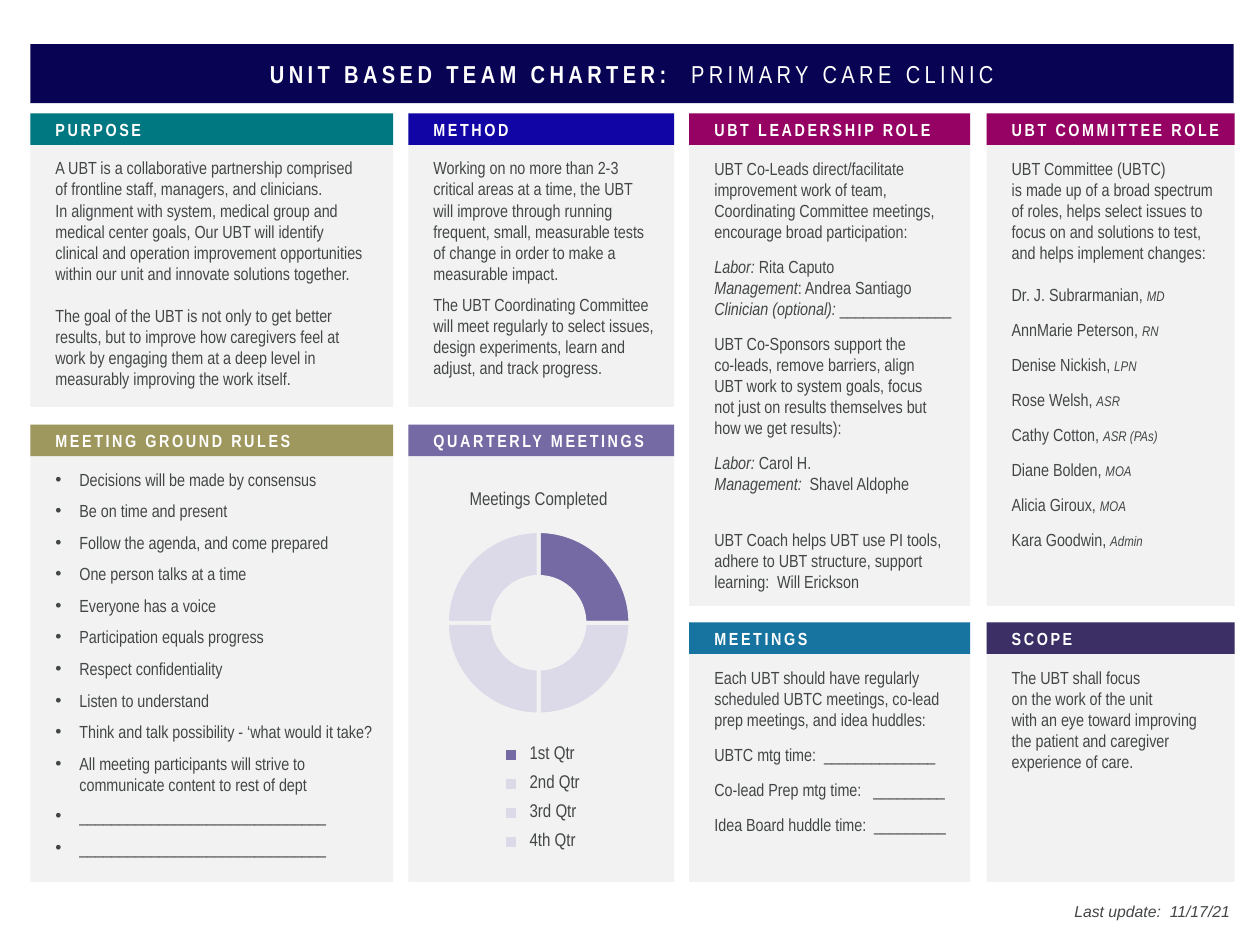
from dataclasses import dataclass
from typing import NamedTuple

from lxml.etree import SubElement
from pptx import Presentation
from pptx.chart.data import CategoryChartData
from pptx.dml.color import RGBColor
from pptx.enum.chart import XL_CHART_TYPE as ChartType, XL_LEGEND_POSITION as LegendPos
from pptx.enum.shapes import MSO_SHAPE as Shape
from pptx.enum.text import MSO_ANCHOR as Anchor, PP_ALIGN as Align
from pptx.oxml import parse_xml
from pptx.oxml.ns import nsdecls, qn
from pptx.util import Inches, Pt

WHITE = RGBColor(0xFF, 0xFF, 0xFF)
TEXT = RGBColor(0x43, 0x46, 0x47)
PANEL = RGBColor(0xF2, 0xF2, 0xF2)
NAVY = RGBColor(0x08, 0x03, 0x52)
TEAL = RGBColor(0x00, 0x78, 0x81)
BLUE = RGBColor(0x11, 0x05, 0xA5)
MAGENTA = RGBColor(0x96, 0x02, 0x63)
OLIVE = RGBColor(0x9F, 0x98, 0x5E)
PURPLE = RGBColor(0x75, 0x6A, 0xA3)
LILAC = RGBColor(0xDC, 0xD9, 0xE8)
CYAN = RGBColor(0x17, 0x73, 0xA0)
INDIGO = RGBColor(0x3B, 0x2F, 0x66)
NARROW = "Arial Narrow"

# Grid: (left, width) of each column, (top, height) of each panel row
COLUMNS = [(0.24, 2.88), (3.24, 2.11), (5.47, 2.23), (7.83, 1.97)]
SHORT_TOP, LONG_BOTTOM = (0.9, 2.33), (3.37, 3.63)
LONG_TOP, SHORT_BOTTOM = (0.9, 3.91), (4.94, 2.06)
HEADER_H = 0.25
INDENT = 0.19


class Run(NamedTuple):
    text: str
    italic: bool = False
    size: float = 10


class Para(NamedTuple):
    runs: list[Run]
    after: float = 8


@dataclass
class Panel:
    title: str
    color: RGBColor
    column: int
    row: tuple[float, float]
    paras: list[Para]
    right: float = 0.1
    bullets: bool = False


def plain(text: str, after: float = 8) -> Para:
    return Para([Run(text)], after)


def labelled(label: str, value: str, after: float = 0) -> Para:
    return Para([Run(label, True), Run(value)], after)


def member(name: str, role: str) -> Para:
    return Para([Run(name + ", "), Run(role, True, 8)])


RULES = [
    "Decisions will be made by consensus", "Be on time and present",
    "Follow the agenda, and come prepared", "One person talks at a time",
    "Everyone has a voice", "Participation equals progress",
    "Respect confidentiality", "Listen to understand",
    "Think and talk possibility - ‘what would it take?",
    "All meeting participants will strive to communicate content to rest of dept",
    "_" * 31, "_" * 31,
]
MEMBERS = [
    ("Dr. J. Subrarmanian", "MD"), ("AnnMarie Peterson", "RN"),
    ("Denise Nickish", "LPN"), ("Rose Welsh", "ASR"),
    ("Cathy Cotton", "ASR (PAs)"), ("Diane Bolden", "MOA"),
    ("Alicia Giroux", "MOA"), ("Kara Goodwin", "Admin"),
]
PANELS = [
    Panel("PURPOSE", TEAL, 0, SHORT_TOP, [
        plain("A UBT is a collaborative partnership comprised of frontline staff, managers, "
              "and clinicians. \nIn alignment with system, medical group and medical center "
              "goals, Our UBT will identify clinical and operation improvement opportunities "
              "within our unit and innovate solutions together.", 12),
        plain("The goal of the UBT is not only to get better results, but to improve how "
              "caregivers feel at work by engaging them at a deep level in measurably "
              "improving the work itself.")], right=0.2),
    Panel("METHOD", BLUE, 1, SHORT_TOP, [
        plain("Working on no more than 2-3 critical areas at a time, the UBT \nwill improve "
              "through running frequent, small, measurable tests \nof change in order to "
              "make a measurable impact.", 6),
        plain("The UBT Coordinating Committee will meet regularly to select issues, design "
              "experiments, learn and adjust, and track progress.", 6)]),
    Panel("UBT LEADERSHIP ROLE", MAGENTA, 2, LONG_TOP, [
        plain("UBT Co-Leads direct/facilitate improvement work of team, Coordinating "
              "Committee meetings, encourage broad participation:"),
        labelled("Labor: ", "Rita Caputo"),
        labelled("Management", ": Andrea Santiago"),
        labelled("Clinician (optional): ", "_" * 14, 8),
        plain("UBT Co-Sponsors support the \nco-leads, remove barriers, align \nUBT work to "
              "system goals, focus \nnot just on results themselves but \nhow we get results):"),
        labelled("Labor: ", "Carol H."),
        labelled("Management:  ", "Shavel Aldophe", 20),
        plain("UBT Coach helps UBT use PI tools, \nadhere to UBT structure, support "
              "learning:  Will Erickson")]),
    Panel("UBT COMMITTEE ROLE", MAGENTA, 3, LONG_TOP, [
        plain("UBT Committee (UBTC) \nis made up of a broad spectrum \nof roles, helps select "
              "issues to \nfocus on and solutions to test, \nand helps implement changes:", 12),
        *(member(*m) for m in MEMBERS)], right=0),
    Panel("MEETING GROUND RULES", OLIVE, 0, LONG_BOTTOM,
          [plain(rule, 6) for rule in RULES], bullets=True),
    Panel("QUARTERLY MEETINGS", PURPLE, 1, LONG_BOTTOM, []),
    Panel("MEETINGS", CYAN, 2, SHORT_BOTTOM, [
        plain("Each UBT should have regularly scheduled UBTC meetings, co-lead \n"
              "prep meetings, and idea huddles:"),
        plain("UBTC mtg time:  " + "_" * 14),
        plain("Co-lead Prep mtg time:   " + "_" * 9),
        plain("Idea Board huddle time:  " + "_" * 9)]),
    Panel("SCOPE", INDIGO, 3, SHORT_BOTTOM, [
        plain("The UBT shall focus \non the work of the unit \nwith an eye toward improving "
              "the patient and caregiver experience of care.", 6)], right=0.2),
]


def style(font, size: float, color: RGBColor, bold=False, italic=False, name=NARROW) -> None:
    font.name, font.size, font.bold, font.italic = name, Pt(size), bold, italic
    font.color.rgb = color


def add_run(p, text: str, size: float, color: RGBColor, spacing: float = 0, **font) -> None:
    for i, line in enumerate(text.split("\n")):
        if i:
            p.add_line_break()
            SubElement(p._p[-1], qn("a:rPr"), sz=str(int(size * 100)))
        r = p.add_run()
        r.text = line
        style(r.font, size, color, **font)
        if spacing:
            r.font._element.set("spc", str(int(spacing * 100)))


def add_box(s, left, top, width, height, fill: RGBColor, anchor, insets):
    sp = s.shapes.add_shape(Shape.RECTANGLE, *map(Inches, (left, top, width, height)))
    sp.shadow.inherit = False
    sp.fill.solid()
    sp.fill.fore_color.rgb = fill
    sp.line.fill.background()
    tf = sp.text_frame
    tf.word_wrap, tf.vertical_anchor = True, anchor
    tf.margin_left, tf.margin_top, tf.margin_right, tf.margin_bottom = map(Inches, insets)
    tf.paragraphs[0].alignment = Align.LEFT
    return tf


def add_bullet(p) -> None:
    pPr = p._p.get_or_add_pPr()
    pPr.set("marL", str(Inches(INDENT)))
    pPr.set("indent", str(-Inches(INDENT)))
    color = SubElement(pPr, qn("a:buClr"))
    SubElement(color, qn("a:srgbClr"), val=str(TEXT))
    SubElement(pPr, qn("a:buFont"), typeface="Arial")
    SubElement(pPr, qn("a:buChar"), char="•")


def add_panel(s, panel: Panel) -> None:
    left, width = COLUMNS[panel.column]
    top, height = panel.row
    tf = add_box(s, left, top, width, height, PANEL, Anchor.TOP, (0.2, 0.35, panel.right, 0.05))
    for i, para in enumerate(panel.paras):
        p = tf.add_paragraph() if i else tf.paragraphs[0]
        p.alignment, p.space_after = Align.LEFT, Pt(para.after)
        if panel.bullets:
            add_bullet(p)
        for run in para.runs:
            add_run(p, run.text, run.size, TEXT, italic=run.italic)
    tf = add_box(s, left, top, width, HEADER_H, panel.color, Anchor.MIDDLE, (0.2, 0, 0.05, 0))
    add_run(tf.paragraphs[0], panel.title, 10, WHITE, 1.5, bold=True)


def set_layout(parent, index: int, target: str, **box: float) -> None:
    for old in parent.findall(qn("c:layout")):
        parent.remove(old)
    values = "".join(f'<c:{k} val="{v}"/>' for k, v in box.items())
    parent.insert(index, parse_xml(
        f'<c:layout {nsdecls("c")}><c:manualLayout>{target}<c:xMode val="edge"/>'
        f'<c:yMode val="edge"/>{values}</c:manualLayout></c:layout>'))


def add_meetings_chart(s) -> None:
    data = CategoryChartData()
    data.categories = [f"  {q} Qtr" for q in ("1st", "2nd", "3rd", "4th")]
    data.add_series("Meetings Completed", [25] * 4)
    chart = s.shapes.add_chart(ChartType.DOUGHNUT, Inches(3.22), Inches(3.75),
                               Inches(2.11), Inches(3.1), data).chart
    style(chart.font, 10, BLUE, name="Arial")
    chart.has_title = True
    add_run(chart.chart_title.text_frame.paragraphs[0], "Meetings Completed", 10.5, TEXT)
    chart.has_legend = True
    legend = chart.legend
    legend.position, legend.include_in_layout = LegendPos.BOTTOM, False
    style(legend.font, 10.5, TEXT)
    set_layout(legend._element, 1, "", x=0.34, y=0.67, w=0.35, h=0.35 - 0.02)
    plot_area = chart._chartSpace.chart.plotArea
    set_layout(plot_area, 0, '<c:layoutTarget val="inner"/>', x=0.15, y=0.15, w=0.7, h=0.47)
    plot = chart.plots[0]
    plot.vary_by_categories = True
    plot_area.find(".//" + qn("c:holeSize")).set("val", "66")
    for i, color in enumerate([PURPLE] + [LILAC] * 3):
        fmt = plot.series[0].points[i].format
        fmt.fill.solid()
        fmt.fill.fore_color.rgb = color
        fmt.line.color.rgb, fmt.line.width = PANEL, Pt(2.25)


def main() -> None:
    prs = Presentation()
    prs.slide_width, prs.slide_height = Inches(10), Inches(7.5)
    s = prs.slides.add_slide(prs.slide_layouts[6])

    # Title bar
    tf = add_box(s, 0.24, 0.35, 9.55, 0.47, NAVY, Anchor.MIDDLE, (0.1, 0.05, 0.1, 0.05))
    p = tf.paragraphs[0]
    p.alignment = Align.CENTER
    add_run(p, "UNIT BASED TEAM CHARTER:  ", 14, WHITE, 2.5, bold=True)
    add_run(p, "PRIMARY CARE CLINIC", 14, WHITE, 2.5)

    # Panels and chart
    for panel in PANELS:
        add_panel(s, panel)
    add_meetings_chart(s)

    # Date of last update
    tf = s.shapes.add_textbox(Inches(8.4), Inches(7.11), Inches(1.46), Inches(0.25)).text_frame
    tf.word_wrap = False
    p = tf.paragraphs[0]
    p.alignment = Align.RIGHT
    add_run(p, "Last update:  11/17/21", 9, TEXT, italic=True, name="Arial")
    prs.save("out.pptx")


if __name__ == "__main__":
    main()
